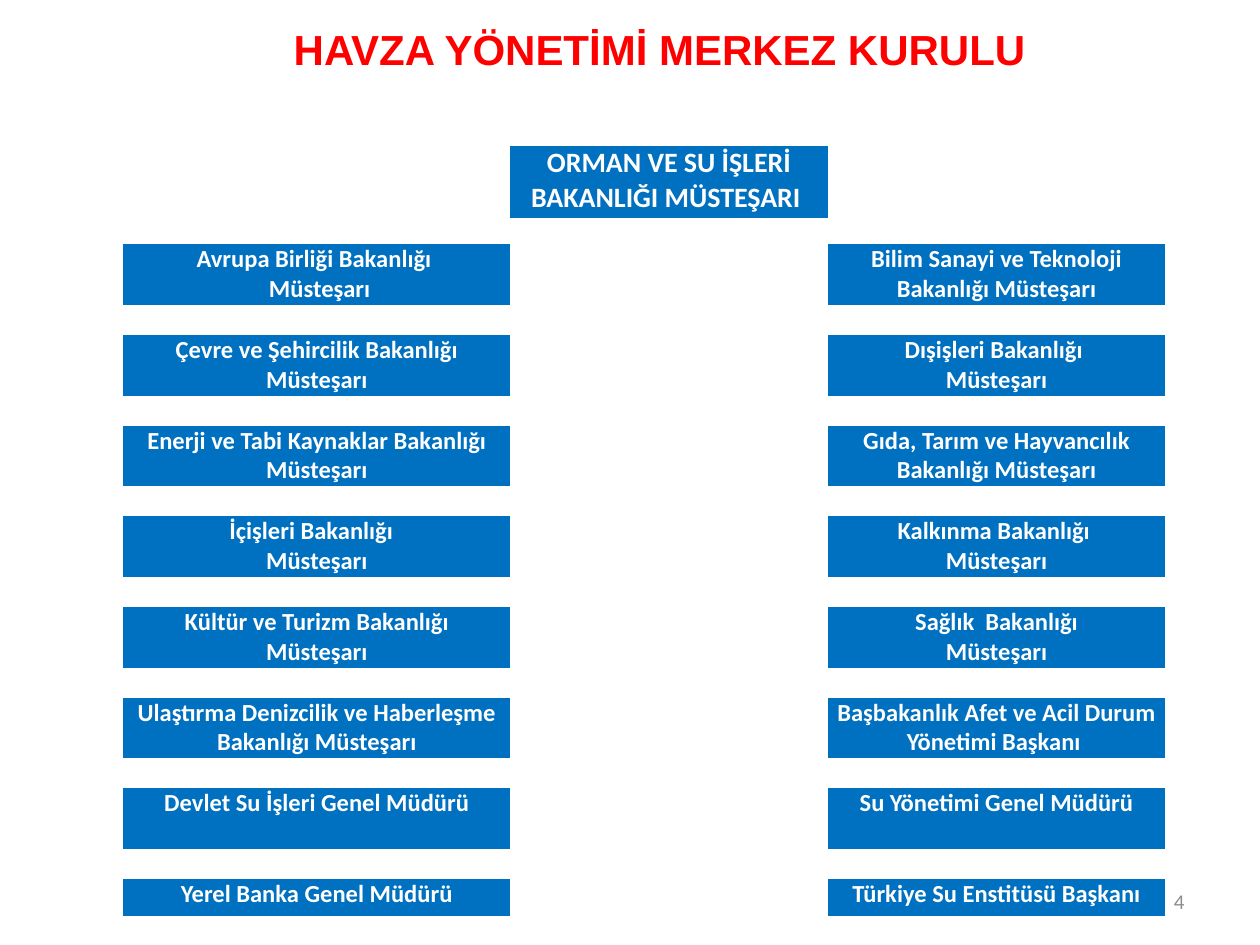
from dataclasses import dataclass

from pptx import Presentation
from pptx.dml.color import RGBColor
from pptx.enum.text import MSO_ANCHOR, PP_ALIGN
from pptx.table import Table, _Cell
from pptx.text.text import TextFrame, _Paragraph
from pptx.util import Inches, Pt


@dataclass(frozen=True)
class Theme:
    blue: RGBColor = RGBColor(0x00, 0x70, 0xC0)
    white: RGBColor = RGBColor(0xFF, 0xFF, 0xFF)
    red: RGBColor = RGBColor(0xFF, 0x00, 0x00)
    gray: RGBColor = RGBColor(0x8C, 0x8C, 0x8C)
    head: str = "Arial"
    body: str = "Calibri"
    title: int = 24
    chair: int = 16
    member: int = 14
    page: int = 12
    blank: int = 8
    plain: str = "{2D5ABB26-0587-4C30-8999-92F81FD0307C}"


@dataclass(frozen=True)
class Pair:
    left: str
    right: str


THEME = Theme()
CHAIR = "ORMAN VE SU İŞLERİ BAKANLIĞI MÜSTEŞARI "
PAIRS = [
    Pair("Avrupa Birliği Bakanlığı \n Müsteşarı",
         "Bilim Sanayi ve Teknoloji Bakanlığı Müsteşarı"),
    Pair("Çevre ve Şehircilik Bakanlığı Müsteşarı",
         "Dışişleri Bakanlığı \nMüsteşarı"),
    Pair("Enerji ve Tabi Kaynaklar Bakanlığı Müsteşarı",
         "Gıda, Tarım ve Hayvancılık Bakanlığı Müsteşarı"),
    Pair("İçişleri Bakanlığı  \nMüsteşarı",
         "Kalkınma Bakanlığı \nMüsteşarı"),
    Pair("Kültür ve Turizm Bakanlığı\nMüsteşarı",
         "Sağlık  Bakanlığı\nMüsteşarı"),
    Pair("Ulaştırma Denizcilik ve Haberleşme Bakanlığı Müsteşarı",
         "Başbakanlık Afet ve Acil Durum Yönetimi Başkanı "),
    Pair("Devlet Su İşleri Genel Müdürü", "Su Yönetimi Genel Müdürü"),
    Pair("Yerel Banka Genel Müdürü", "Türkiye Su Enstitüsü Başkanı"),
]
COLS = [0.55, 3.07, 1.02, 1.5, 2.68, 0.71]
ROWS = [0.57, 0.21] + [0.48, 0.24] * (len(PAIRS) - 1) + [0.29, 0.2, 0.2]


def add_run(para: _Paragraph, text: str, size: int, face: str,
            color: RGBColor, bold: bool = True) -> None:
    run = para.add_run()
    run.text = text
    run.font.size = Pt(size)
    run.font.name = face
    run.font.bold = bold
    run.font.color.rgb = color


def write(frame: TextFrame, text: str, size: int) -> None:
    for i, line in enumerate(text.split("\n")):
        para = frame.add_paragraph() if i else frame.paragraphs[0]
        para.alignment = PP_ALIGN.CENTER
        add_run(para, line, size, THEME.body, THEME.white)


def fill_cell(cell: _Cell, text: str, size: int) -> None:
    cell.fill.solid()
    cell.fill.fore_color.rgb = THEME.blue
    write(cell.text_frame, text, size)


def clear(table: Table) -> None:
    table.first_row = False
    table.horz_banding = False
    table._tbl.tblPr[0].text = THEME.plain
    for cell in table.iter_cells():
        cell.margin_left = cell.margin_right = 0
        cell.margin_top = cell.margin_bottom = 0
        cell.fill.background()
        end = cell.text_frame.paragraphs[0]._p.get_or_add_endParaRPr()
        end.set("sz", str(THEME.blank * 100))


def add_board(slide) -> None:
    table = slide.shapes.add_table(
        len(ROWS), len(COLS), Inches(0.43), Inches(1.16),
        Inches(sum(COLS)), Inches(sum(ROWS))).table
    for col, width in zip(table.columns, COLS):
        col.width = Inches(width)
    for row, height in zip(table.rows, ROWS):
        row.height = Inches(height)
    clear(table)
    top = table.cell(0, 2)
    top.merge(table.cell(0, 3))
    fill_cell(top, CHAIR, THEME.chair)
    for i, pair in enumerate(PAIRS):
        row = 2 + 2 * i
        fill_cell(table.cell(row, 1), pair.left, THEME.member)
        fill_cell(table.cell(row, 4), pair.right, THEME.member)


def add_title(slide) -> None:
    title = slide.shapes.title
    title.left, title.top = Inches(2.2), Inches(0.13)
    title.width, title.height = Inches(6.07), Inches(0.51)
    frame = title.text_frame
    frame.word_wrap = False
    frame.vertical_anchor = MSO_ANCHOR.MIDDLE
    para = frame.paragraphs[0]
    para.alignment = PP_ALIGN.CENTER
    add_run(para, "HAVZA YÖNETİMİ MERKEZ KURULU",
            THEME.title, THEME.head, THEME.red)


def add_page(slide) -> None:
    box = slide.shapes.add_textbox(
        Inches(7.17), Inches(6.95), Inches(2.33), Inches(0.4))
    frame = box.text_frame
    frame.word_wrap = True
    frame.vertical_anchor = MSO_ANCHOR.MIDDLE
    para = frame.paragraphs[0]
    para.alignment = PP_ALIGN.RIGHT
    add_run(para, "4", THEME.page, THEME.body, THEME.gray, False)


def main() -> None:
    deck = Presentation()
    deck.slide_width, deck.slide_height = Inches(10), Inches(7.5)
    slide = deck.slides.add_slide(deck.slide_layouts[5])
    add_page(slide)
    add_board(slide)
    add_title(slide)
    deck.save("out.pptx")


if __name__ == "__main__":
    main()
